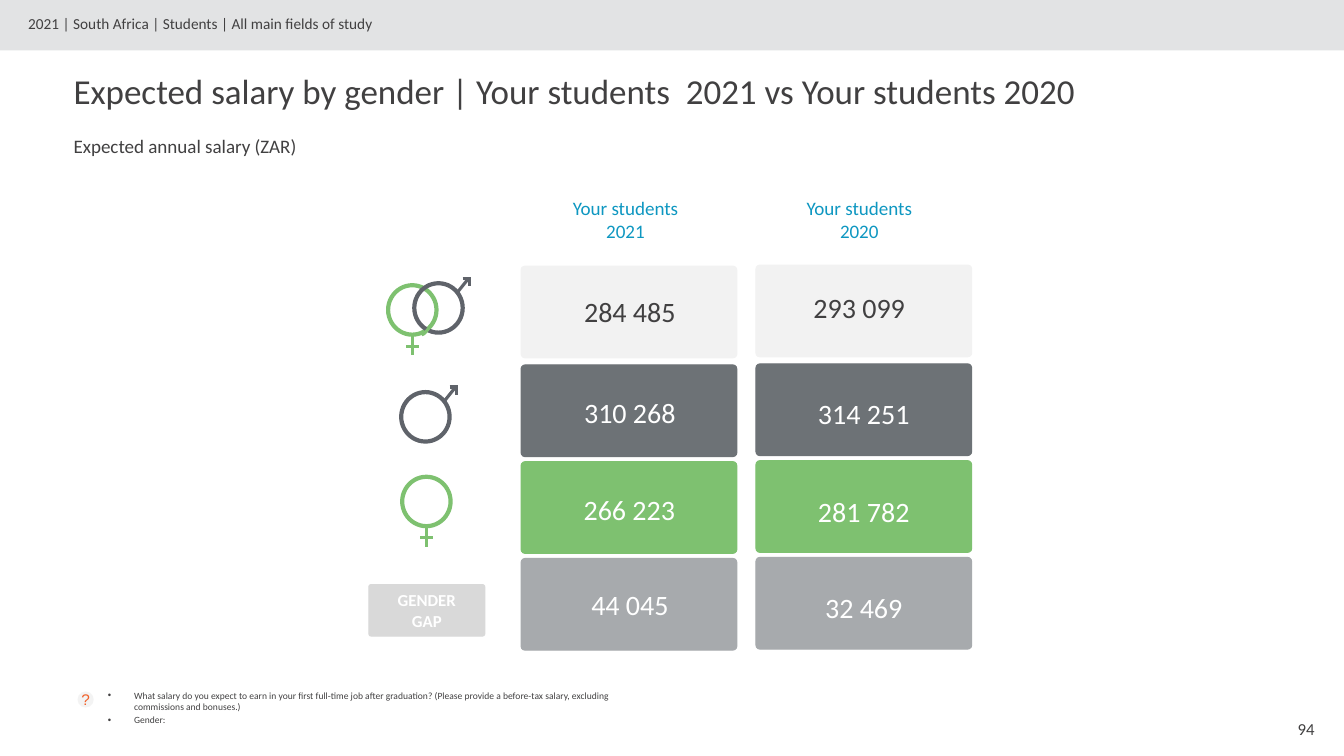
from dataclasses import dataclass

from lxml import etree
from pptx import Presentation, util as u
from pptx.dml.color import RGBColor
from pptx.enum import shapes, text
from pptx.oxml.ns import qn

KINDS = shapes.MSO_SHAPE
ANCHOR = text.MSO_ANCHOR
ALIGN = text.PP_ALIGN


@dataclass(frozen=True)
class Theme:
    font: str = "Calibri"
    badge_font: str = "Arial"
    ink: str = "414041"
    white: str = "FFFFFF"
    accent: str = "0E97C1"
    band: str = "E2E3E4"
    badge: str = "F3F3F3"
    question: str = "F1612A"
    all_students: str = "F2F2F2"
    male: str = "6D7276"
    male_symbol: str = "5F636A"
    female: str = "7EC170"
    gap: str = "A7AAAD"
    gap_label: str = "D9D9D9"
    title: float = 25
    value: float = 20
    heading: float = 13.6
    label: float = 12
    question_size: float = 11
    context: float = 10.9
    note: float = 6.8
    circle_line: float = 3
    stroke: float = 2.25
    outline: float = 0.75
    corner: float = 0.043


THEME = Theme()


def write(frame, *lines, size, color=THEME.ink, font=THEME.font, bold=False,
          align=ALIGN.LEFT, anchor=ANCHOR.TOP, inset=0.1, wrap=True,
          bullet=None, indent=0.26, gap=0):
    """Fill a text frame with one paragraph per line."""
    frame.word_wrap = wrap
    frame.auto_size = text.MSO_AUTO_SIZE.NONE
    frame.vertical_anchor = anchor
    frame.margin_left = frame.margin_right = u.Inches(inset)
    frame.margin_top = frame.margin_bottom = u.Inches(min(inset, 0.05))
    for i, line in enumerate(lines):
        para = frame.add_paragraph() if i else frame.paragraphs[0]
        para.text = line
        para.alignment = align
        para.space_before = u.Pt(gap if i else 0)
        if bullet:
            props = para._p.get_or_add_pPr()
            props.set("marL", str(u.Inches(indent)))
            props.set("indent", str(-u.Inches(indent)))
            etree.SubElement(props, qn("a:buChar")).set("char", bullet)
        para.font.name, para.font.size, para.font.bold = font, u.Pt(size), bold
        para.font.color.rgb = RGBColor.from_string(color)


class Board:
    """The current slide on a grid of 160 columns by 90 rows."""

    def __init__(self, deck, theme):
        self.theme = theme
        self.col, self.row = deck.slide_width / 160, deck.slide_height / 90
        self.slide = deck.slides.add_slide(deck.slide_layouts[4])
        self.holders = {p.placeholder_format.idx: p for p in self.slide.placeholders}

    def box(self, left, top, width, height):
        return (round(left * self.col), round(top * self.row),
                round(width * self.col), round(height * self.row))

    def fill_holder(self, idx, area, *lines, **style):
        holder = self.holders.pop(idx)
        holder.left, holder.top, holder.width, holder.height = self.box(*area)
        write(holder.text_frame, *lines, inset=0.11, **style)

    def drop_unused(self):
        for holder in self.holders.values():
            holder._element.getparent().remove(holder._element)

    def label(self, area, *lines, **style):
        write(self.slide.shapes.add_textbox(*self.box(*area)).text_frame, *lines, **style)

    def shape(self, kind, area, fill=None, line=None, weight=0, back=False):
        item = self.slide.shapes.add_shape(kind, *self.box(*area))
        item.shadow.inherit = False
        if fill:
            item.fill.solid()
            item.fill.fore_color.rgb = RGBColor.from_string(fill)
        else:
            item.fill.background()
        if line:
            item.line.color.rgb = RGBColor.from_string(line)
            item.line.width = u.Pt(weight)
        else:
            item.line.fill.background()
        if back:
            self.slide.shapes._spTree.insert(2, item._element)
        return item

    def tile(self, area, color):
        item = self.shape(KINDS.ROUNDED_RECTANGLE, area, color, color, self.theme.outline)
        item.adjustments[0] = self.theme.corner
        return item

    def stroke(self, x1, y1, x2, y2, color):
        ends = self.box(x1, y1, x2, y2)
        line = self.slide.shapes.add_connector(shapes.MSO_CONNECTOR.STRAIGHT, *ends)
        line.line.color.rgb = RGBColor.from_string(color)
        line.line.width = u.Pt(self.theme.stroke)
        etree.SubElement(line._element.spPr, qn("a:effectLst"))

    def symbol(self, left, top, strokes, color):
        """A ring with strokes placed relative to its top left corner."""
        self.shape(KINDS.FLOWCHART_CONNECTOR, (left, top, 5.76, 5.88),
                   line=color, weight=self.theme.circle_line)
        for x1, y1, x2, y2 in strokes:
            self.stroke(left + x1, top + y1, left + x2, top + y2, color)


MALE = [(5.76, -0.6, 6.72, -0.6), (6.6, -0.72, 6.6, 0.36), (6.48, -0.6, 5.04, 1.2)]
FEMALE = [(2.88, 5.88, 2.88, 8.34), (2.16, 7.26, 3.72, 7.26)]

# Each year: heading, heading left, tile left, tile shift, value width,
# then (value, left, top) from all students down to the gap
YEARS = [
    ("Your students 2021", 64.8, 62.04, 0, 24.48,
     [("284 485", 62.76, 34.44), ("310 268", 62.76, 46.44),
      ("266 223", 62.7, 57.96), ("44 045", 62.76, 69.36)]),
    ("Your students 2020", 92.64, 90, -0.12, 25.68,
     [("293 099", 89.46, 33.96), ("314 251", 90, 46.56),
      ("281 782", 90, 58.2), ("32 469", 90, 69.6)]),
]
ROWS = [(31.68, THEME.all_students, THEME.ink), (43.44, THEME.male, THEME.white),
        (54.96, THEME.female, THEME.white), (66.48, THEME.gap, THEME.white)]


def main():
    deck = Presentation()
    deck.slide_width, deck.slide_height = u.Inches(13.33), u.Inches(7.5)
    board = Board(deck, THEME)

    # Heading band, title and subtitle
    board.shape(KINDS.RECTANGLE, (0, 0, 160, 6), THEME.band, back=True)
    board.fill_holder(3, (2.04, 1.08, 136.32, 3.72),
                      "2021 | South Africa | Students | All main fields of study",
                      size=THEME.context)
    board.fill_holder(0, (7.44, 7.68, 150.6, 7.44),
                      "Expected salary by gender | Your students  2021 vs Your students 2020",
                      size=THEME.title)
    board.fill_holder(1, (7.44, 15.36, 150.48, 4.32), "Expected annual salary (ZAR)",
                      size=THEME.heading)

    # Salary tiles by year
    for heading, heading_left, tile_left, shift, width, values in YEARS:
        board.label((heading_left, 22.68, 19.32, 6.72), heading, size=THEME.heading,
                    color=THEME.accent, align=ALIGN.CENTER, anchor=ANCHOR.BOTTOM)
        for (top, fill, ink), (salary, left, salary_top) in zip(ROWS, values):
            board.tile((tile_left, top + shift, 25.68, 10.92), fill)
            board.label((left, salary_top, width, 5.28), salary, size=THEME.value,
                        color=ink, align=ALIGN.CENTER, anchor=ANCHOR.MIDDLE)

    # Gender symbols
    board.symbol(46.2, 33.96, FEMALE, THEME.female)
    board.symbol(49.32, 33.72, MALE, THEME.male_symbol)
    link = board.shape(KINDS.ARC, (49.44, 38.16, 3.36, 0.6),
                       line=THEME.female, weight=THEME.stroke)
    link.adjustments[0], link.adjustments[1] = 161.64, 0
    link.rotation = 123.6
    board.symbol(47.76, 46.68, MALE, THEME.male_symbol)
    board.symbol(47.88, 56.76, FEMALE, THEME.female)
    gap_label = board.tile((43.92, 69.6, 13.8, 6.12), THEME.gap_label)
    write(gap_label.text_frame, "GENDER", "GAP", size=THEME.label, color=THEME.white,
          bold=True, align=ALIGN.CENTER, anchor=ANCHOR.MIDDLE)

    # Survey questions and page number
    badge = board.shape(KINDS.FLOWCHART_CONNECTOR, (9.24, 82.32, 1.92, 1.92), THEME.badge)
    write(badge.text_frame, "?", size=THEME.question_size, color=THEME.question,
          font=THEME.badge_font, align=ALIGN.CENTER, anchor=ANCHOR.MIDDLE,
          inset=0, wrap=False)
    board.fill_holder(2, (11.52, 81.48, 66.12, 5.4),
                      "What salary do you expect to earn in your first full-time job after "
                      "graduation? (Please provide a before-tax salary, excluding "
                      "commissions and bonuses.)",
                      "Gender:", size=THEME.note, bullet="•", gap=1.4)
    board.label((145.92, 84.36, 11.76, 4.8), "94", size=THEME.label,
                align=ALIGN.RIGHT, anchor=ANCHOR.MIDDLE)
    board.drop_unused()
    deck.save("out.pptx")


if __name__ == "__main__":
    main()
